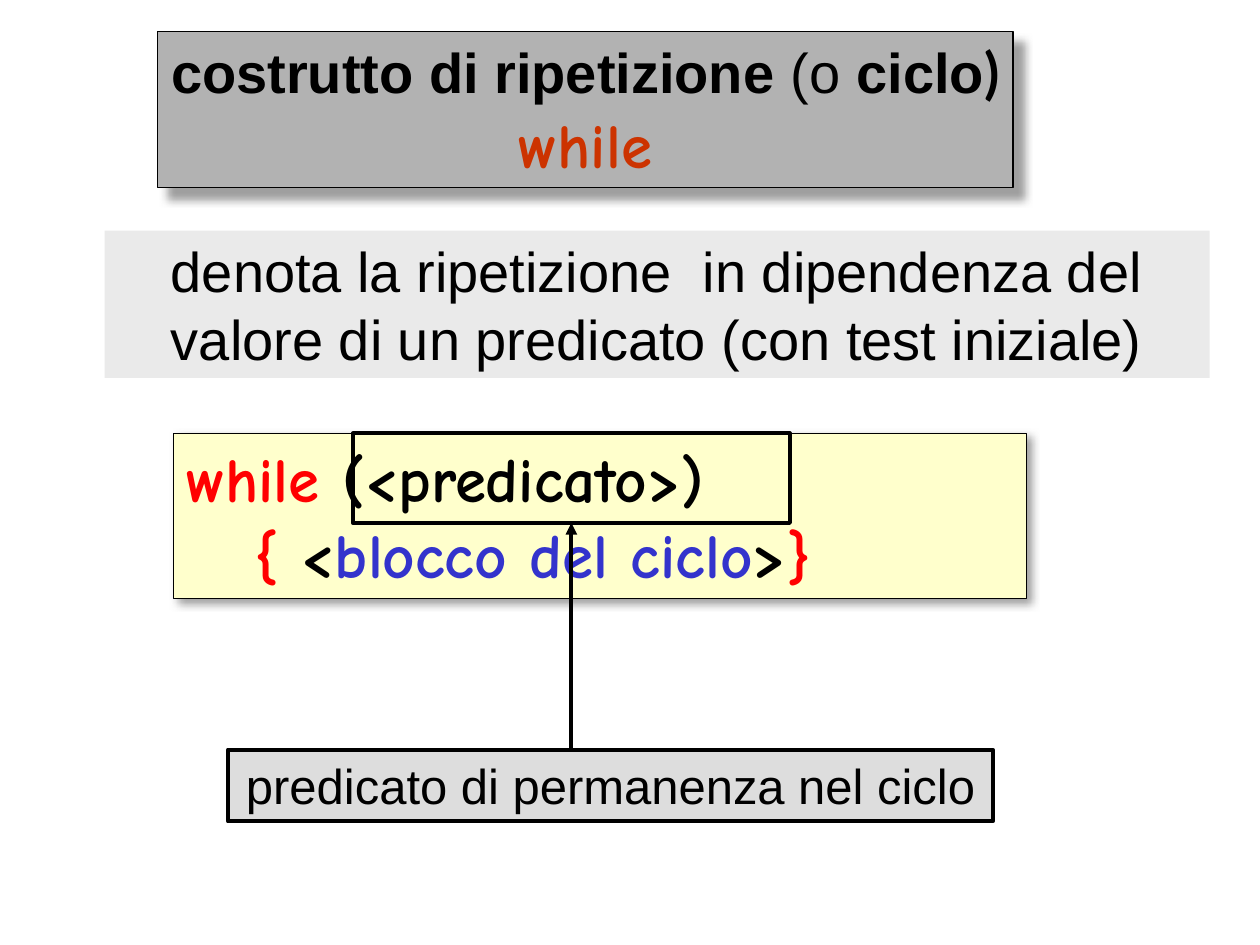
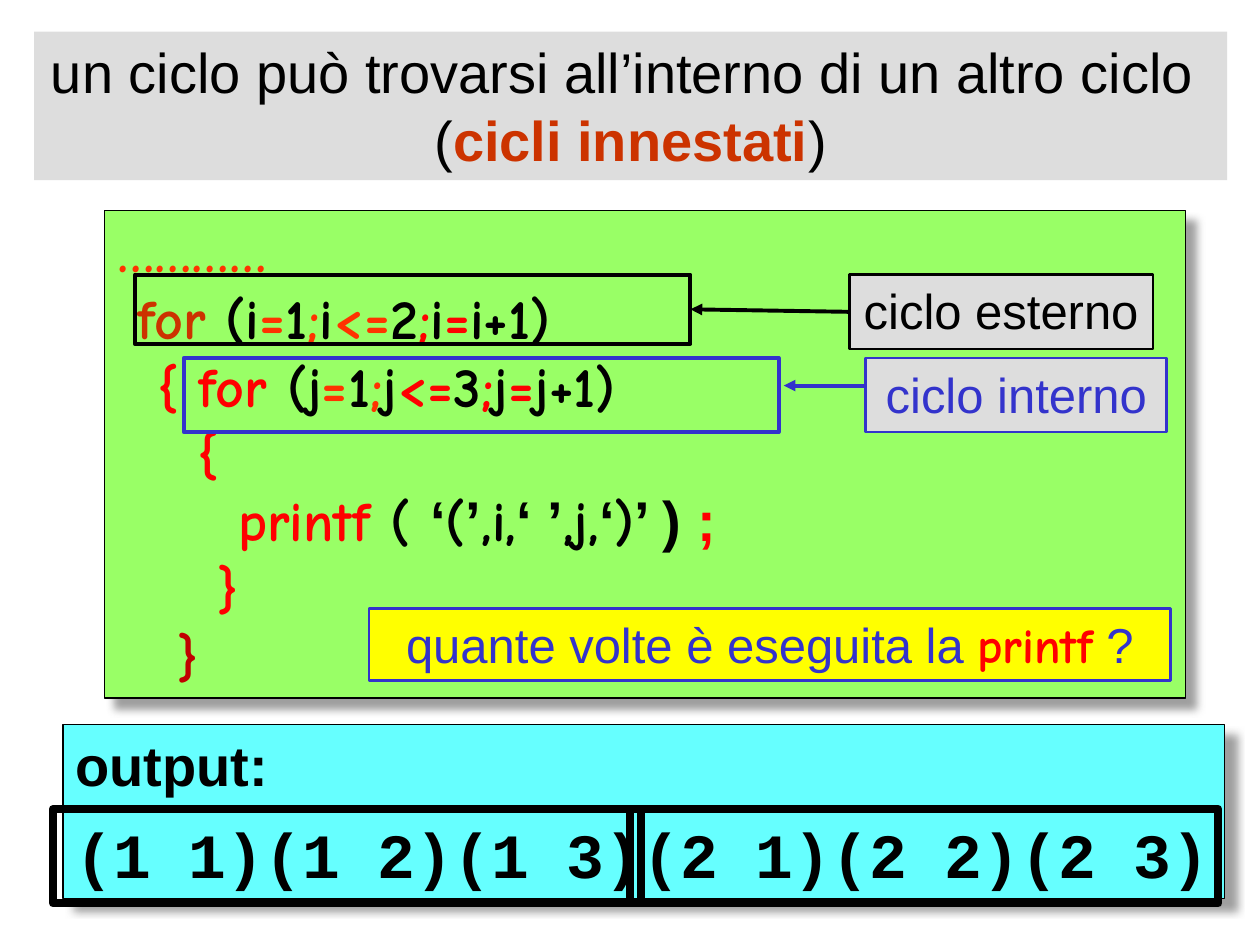
from lxml.etree import SubElement
from pptx import Presentation
from pptx.dml.color import RGBColor
from pptx.enum.shapes import MSO_CONNECTOR, MSO_SHAPE
from pptx.enum.text import MSO_ANCHOR, MSO_AUTO_SIZE, PP_ALIGN
from pptx.oxml.ns import qn
from pptx.util import Inches, Pt

WIDE, HIGH = Inches(10), Inches(7.5)
CELL = WIDE / 100  # square grid: 100 columns by 75 rows
TOP, LEFT, BOTTOM, RIGHT = range(4)


class Theme:
    colours = dict(
        black="000000", grey="B2B2B2", pale="EAEAEA", silver="DDDDDD",
        cream="FFFFCC", lime="99FF66", cyan="66FFFF", yellow="FFFF00",
        red="FF0000", orange="FF3300", brick="CC3300", wine="C00000",
        blue="3333CC", shade="808080")
    sizes = dict(big=36, head=32, note=28)
    fonts = dict(  # name, bold
        plain=("Arial", False), bold=("Arial", True), round=("Lato", True),
        code=("Comic Neue", True), mono=("Courier New", True))
    space = 0.36  # width of one code space, in ems
    blur, opacity = 5, 75


def code(*pairs):
    return [(text, "code", colour) for text, colour in pairs]


def loop(var, last, first_semi, less, second_semi):
    """Runs of a for header; the operators' colours vary from line to line."""
    return code((f"({var}", "black"), ("=", "orange"), ("1", "black"),
                (";", first_semi), (var, "black"), ("<=", less),
                (last, "black"), (";", second_semi), (var, "black"),
                ("=", "red"), (f"{var}+1)", "black"))


def label(text, colour="black"):
    return [("note", 0, [(text, "plain", colour)])]


PRINT = code(("printf", "red"), (" ( ", "black")) + [
    (text, font, "black") for text, font in (
        ("‘", "bold"), ("(", "code"), ("’", "bold"), (",i,", "code"),
        ("‘ ’", "bold"), (",j,", "code"), ("‘", "bold"), (")", "code"),
        ("’ ) ", "bold"))] + [(";", "bold", "red")]

# Box: name -> at (column, row, columns, rows) and format values.
# Paragraph: size, indent in code spaces, runs of (text, font, colour).
SLIDES = [
    dict(
        boxes=dict(
            title=dict(
                at=(12.5, 2.5, 67.9, 12.4), fill="grey", line="black",
                shadow=8.5, centre=True, wrap=False, text=[
                    ("head", 0, [("costrutto di ripetizione ", "bold", "black"),
                                 ("(o ", "plain", "black"),
                                 ("ciclo", "bold", "black"),
                                 (")", "round", "black")]),
                    ("big", 0, code(("while", "brick")))]),
            body=dict(
                at=(8.3, 18.3, 87.7, 11.7), fill="pale", centre=True, text=[
                    ("head", 0, [("denota la ripetizione  in dipendenza del "
                                  "valore di un predicato (con test iniziale)",
                                  "plain", "black")])]),
            syntax=dict(
                at=(13.8, 34.4, 67.7, 13.1), fill="cream", line="black",
                shadow=3, text=[
                    ("big", 0, code(("while", "red"),
                                    (" (<predicato>)", "black"))),
                    ("big", 3, code(("{ ", "red"), ("<", "black"),
                                    ("blocco del ciclo", "blue"),
                                    (">", "black"), ("}", "red")))]),
            note=dict(
                at=(18.1, 59.5, 60.7, 5.7), fill="silver", line="black",
                weight=2.25, centre=True, wrap=False,
                text=label("predicato di permanenza nel ciclo")),
            test=dict(at=(28, 34.4, 34.7, 7.1), line="black", weight=2.25)),
        arrows=[((45.35, 59.5), (45.35, 41.5), "black", None,
                 ("test", BOTTOM))]),
    dict(
        boxes=dict(
            title=dict(
                at=(2.7, 2.5, 94.7, 11.8), fill="silver", centre=True,
                wrap=False, text=[
                    ("head", 0, [("un ciclo può trovarsi all’interno di un "
                                  "altro ciclo ", "plain", "black")]),
                    ("head", 0, [("(", "plain", "black"),
                                 ("cicli innestati", "bold", "brick"),
                                 (")", "plain", "black")])]),
            body=dict(
                at=(8.3, 16.7, 85.8, 38.7), fill="lime", line="black",
                shadow=8.5, text=[
                    ("head", 0, code(("…………", "orange"))),
                    ("head", 1, code(("for ", "brick")) + loop(
                        "i", "2", "orange", "orange", "red")),
                    ("head", 2, code(("{ for ", "red")) + loop(
                        "j", "3", "orange", "red", "red")),
                    ("head", 4, code(("{", "red"))),
                    ("head", 6, PRINT),
                    ("head", 5, code(("}", "red"))),
                    ("head", 3, code(("}", "wine")))]),
            output=dict(
                at=(5, 57.5, 92.2, 13.8), fill="cyan", line="black",
                shadow=8.5, wrap=False, gap=10, text=[
                    ("head", 0, [("output:", "bold", "black")]),
                    ("big", 0, [("(1 1)(1 2)(1 3)(2 1)(2 2)(2 3)",
                                 "mono", "black")])]),
            first=dict(at=(4.2, 64.2, 46.7, 7.5), line="black", weight=4.5),
            second=dict(at=(50, 64.2, 46.7, 7.5), line="black", weight=4.5),
            outer=dict(
                at=(67.4, 21.8, 24.1, 5.9), fill="silver", line="black",
                weight=1.5, centre=True, wrap=False,
                text=label("ciclo esterno")),
            head=dict(at=(10.7, 21.8, 44.1, 5.5), line="black", weight=2.25),
            inner=dict(
                at=(68.7, 28.4, 23.9, 5.9), fill="silver", line="blue",
                weight=1.5, centre=True, wrap=False,
                text=label("ciclo interno", "blue")),
            nested=dict(at=(14.6, 28.4, 47.2, 5.9), line="blue", weight=2.25),
            query=dict(
                at=(29.3, 48.3, 63.6, 5.7), fill="yellow", line="blue",
                weight=1.5, centre=True, wrap=False, text=[
                    ("note", 0, [("quante volte è eseguita la ", "plain", "blue"),
                                 ("printf", "code", "red"),
                                 (" ?", "plain", "blue")])])),
        arrows=[((67.4, 24.7), (54.8, 24.7), "black", ("outer", LEFT),
                 ("head", RIGHT)),
                ((68.7, 30.6), (62.2, 30.6), "blue", None, None)]),
]


def grid(values):
    return [round(value * CELL) for value in values]


def rgb(name):
    return RGBColor.from_string(Theme.colours[name])


def paint(fill, colour):
    if colour:
        fill.solid()
        fill.fore_color.rgb = rgb(colour)
    else:
        fill.background()


def shade(shape, reach):
    """Cast a soft shadow down and right, reach points away."""
    effects = shape.element.spPr.find(qn("a:effectLst"))
    outer = SubElement(effects, qn("a:outerShdw"), dict(
        blurRad=str(Pt(Theme.blur)), dist=str(Pt(reach)),
        dir=str(45 * 60000), algn="ctr", rotWithShape="0"))
    tint = SubElement(outer, qn("a:srgbClr"), val=Theme.colours["shade"])
    SubElement(tint, qn("a:alpha"), val=str(Theme.opacity * 1000))


def write(frame, lines, centre, wrap, gap):
    formats = dict(word_wrap=wrap, auto_size=MSO_AUTO_SIZE.NONE,
                   vertical_anchor=MSO_ANCHOR.TOP)
    for key, value in formats.items():
        setattr(frame, key, value)
    for row, (size, spaces, runs) in enumerate(lines):
        para = frame.add_paragraph() if row else frame.paragraphs[0]
        points = Theme.sizes[size]
        para.alignment = PP_ALIGN.CENTER if centre else PP_ALIGN.LEFT
        para.space_before = Pt(gap if row else 0)
        props = para._p.get_or_add_pPr()
        props.set("marL", str(Pt(spaces * Theme.space * points)))
        props.set("indent", "0")
        SubElement(props, qn("a:buNone"))
        for text, font, colour in runs:
            run = para.add_run()
            run.text = text
            name, bold = Theme.fonts[font]
            for key, value in dict(name=name, bold=bold, size=Pt(points)).items():
                setattr(run.font, key, value)
            run.font.color.rgb = rgb(colour)


def draw(slide, name, at, fill=None, line=None, weight=0.75, shadow=None,
         text=(), centre=False, wrap=True, gap=0):
    holders = dict(title=0, body=1)
    place = grid(at)
    if name in holders:
        shape = slide.placeholders[holders[name]]
        for key, value in zip(("left", "top", "width", "height"), place):
            setattr(shape, key, value)
    else:
        shape = slide.shapes.add_shape(MSO_SHAPE.RECTANGLE, *place)
    paint(shape.fill, fill)
    paint(shape.line.fill, line)
    if line:
        shape.line.width = Pt(weight)
    shape.shadow.inherit = False
    if shadow:
        shade(shape, shadow)
    if text:
        write(shape.text_frame, text, centre, wrap, gap)
    return shape


def link(slide, boxes, start, end, colour, source, target):
    arrow = slide.shapes.add_connector(
        MSO_CONNECTOR.STRAIGHT, *grid(start + end))
    if source:
        arrow.begin_connect(boxes[source[0]], source[1])
    if target:
        arrow.end_connect(boxes[target[0]], target[1])
    paint(arrow.line.fill, colour)
    arrow.line.width = Pt(2.25)
    props = arrow.element.spPr
    SubElement(props.find(qn("a:ln")), qn("a:tailEnd"), type="triangle")
    SubElement(props, qn("a:effectLst"))


def main():
    deck = Presentation()
    deck.slide_width, deck.slide_height = WIDE, HIGH
    for page in SLIDES:
        slide = deck.slides.add_slide(deck.slide_layouts[1])
        boxes = {name: draw(slide, name, **look)
                 for name, look in page["boxes"].items()}
        for arrow in page["arrows"]:
            link(slide, boxes, *arrow)
    deck.save("out.pptx")


if __name__ == "__main__":
    main()
